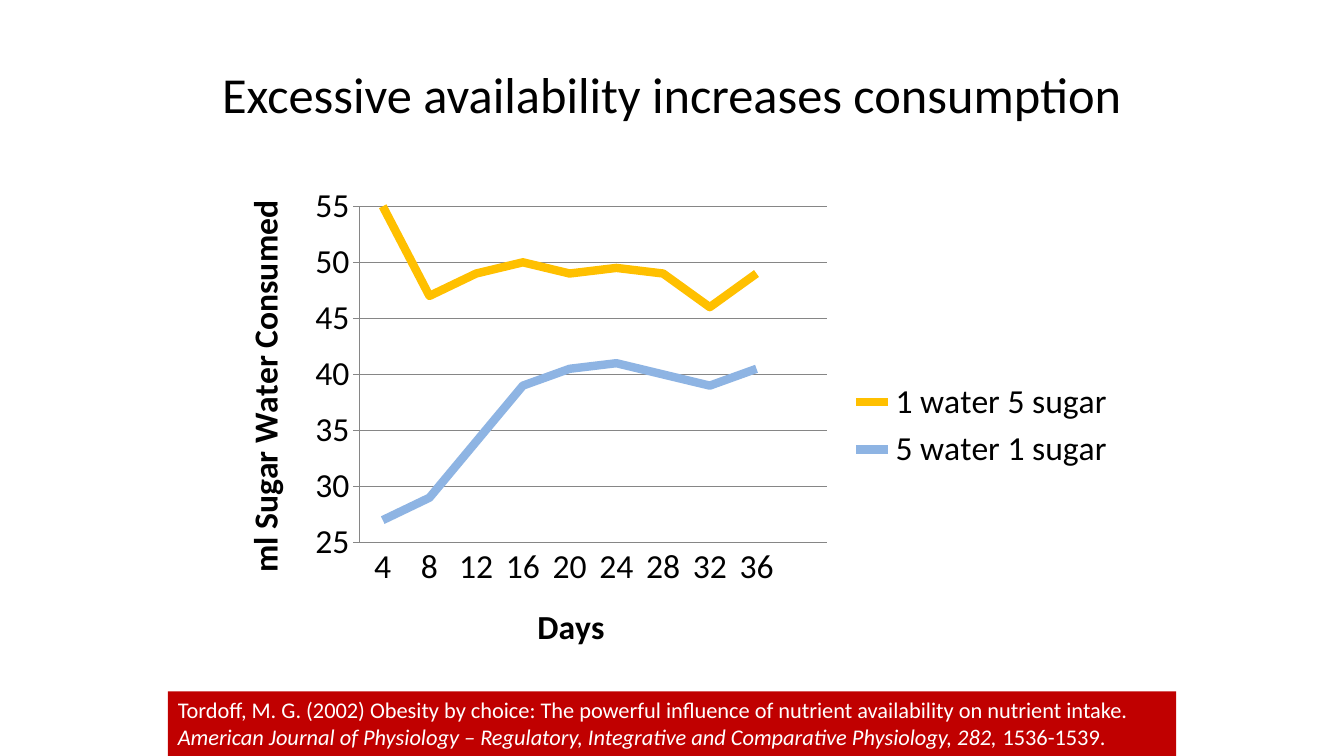
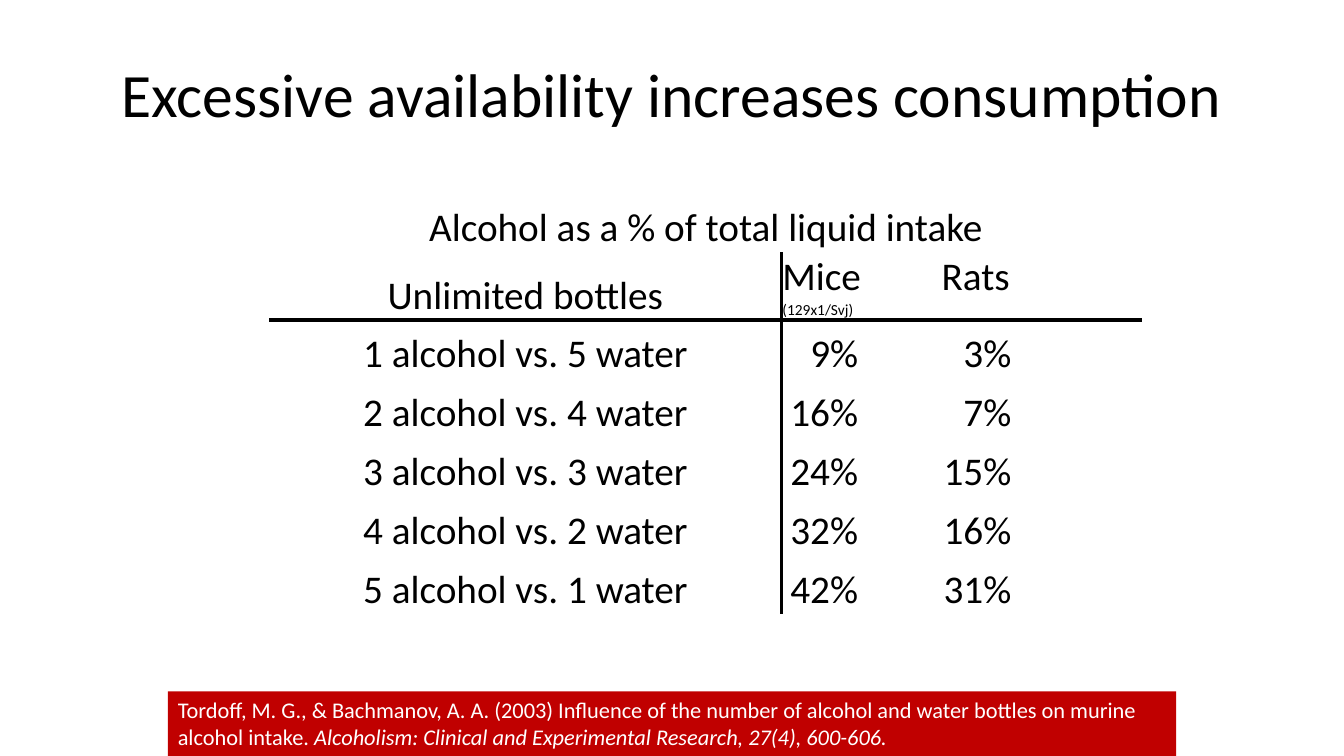
"""Build two slides on how availability increases consumption."""
from dataclasses import dataclass

from lxml.etree import SubElement
from pptx import Presentation
from pptx.chart.data import CategoryChartData
from pptx.dml.color import RGBColor
from pptx.enum.chart import XL_CHART_TYPE, XL_LEGEND_POSITION, XL_MARKER_STYLE, XL_TICK_MARK
from pptx.enum.shapes import MSO_SHAPE
from pptx.enum.text import MSO_ANCHOR, MSO_AUTO_SIZE, PP_ALIGN
from pptx.oxml import parse_xml
from pptx.oxml.ns import nsdecls, qn
from pptx.util import Inches, Pt


@dataclass(frozen=True)
class Theme:
    font: str = "Calibri"
    black: RGBColor = RGBColor(0, 0, 0)
    white: RGBColor = RGBColor(255, 255, 255)
    red: RGBColor = RGBColor(0xC0, 0, 0)
    gold: RGBColor = RGBColor(0xFF, 0xC0, 0)
    blue: RGBColor = RGBColor(0x8E, 0xB4, 0xE3)
    grid: RGBColor = RGBColor(0x86, 0x86, 0x86)
    chart_title_size: int = 36
    table_title_size: int = 44
    chart_size: int = 24
    table_size: int = 28
    strain_size: int = 11
    citation_size: int = 16


theme = Theme()


def add_run(paragraph, text, size, color=theme.black, italic=False):
    run = paragraph.add_run()
    run.text = text
    run.font.name = theme.font
    run.font.size = Pt(size)
    run.font.color.rgb = color
    run.font.italic = italic


def add_slide(title_text, title_size, title_width, citation):
    slide = presentation.slides.add_slide(presentation.slide_layouts[5])
    title = slide.shapes.title
    title.left = Inches((13.33 - title_width) / 2)
    title.top = Inches(0.3)
    title.width, title.height = Inches(title_width), Inches(1.25)
    title.text_frame.vertical_anchor = MSO_ANCHOR.MIDDLE
    paragraph = title.text_frame.paragraphs[0]
    paragraph.alignment = PP_ALIGN.CENTER
    add_run(paragraph, title_text, title_size)

    band = slide.shapes.add_shape(
        MSO_SHAPE.RECTANGLE, Inches((13.33 - 10) / 2), Inches(6.86), Inches(10), Inches(0.64)
    )
    band.shadow.inherit = False
    band.fill.solid()
    band.fill.fore_color.rgb = theme.red
    band.line.fill.background()
    frame = band.text_frame
    frame.word_wrap = True
    frame.auto_size = MSO_AUTO_SIZE.SHAPE_TO_FIT_TEXT
    frame.vertical_anchor = MSO_ANCHOR.TOP
    frame.paragraphs[0].alignment = PP_ALIGN.LEFT
    for text, italic in citation:
        add_run(frame.paragraphs[0], text, theme.citation_size, theme.white, italic)
    return slide


presentation = Presentation()
presentation.slide_width = Inches(13.33)
presentation.slide_height = Inches(7.5)
title_text = "Excessive availability increases consumption"

chart_slide = add_slide(title_text, theme.chart_title_size, 10, [
    ("Tordoff, M. G. (2002) Obesity by choice: The powerful influence of nutrient "
     "availability on nutrient intake. ", False),
    ("American Journal of Physiology – Regulatory, Integrative and Comparative "
     "Physiology, 282, ", True),
    ("1536-1539.", False),
])
chart_data = CategoryChartData()
chart_data.categories = [str(day) for day in range(4, 40, 4)] + [""]
chart_data.add_series("1 water 5 sugar", [55, 47, 49, 50, 49, 49.5, 49, 46, 49, None])
chart_data.add_series("5 water 1 sugar", [27, 29, 34, 39, 40.5, 41, 40, 39, 40.5, None])
chart = chart_slide.shapes.add_chart(
    XL_CHART_TYPE.LINE, Inches(2.17), Inches(1.75), Inches(9), Inches(4.95), chart_data
).chart
chart.has_title = False
chart.font.name = theme.font
chart.font.size = Pt(theme.chart_size)
chart.font.color.rgb = theme.black
chart.has_legend = True
chart.legend.position = XL_LEGEND_POSITION.RIGHT
chart.legend.include_in_layout = False

plot = chart.plots[0]
plot.vary_by_categories = False
for series, color in zip(plot.series, (theme.gold, theme.blue)):
    series.smooth = False
    series.marker.style = XL_MARKER_STYLE.NONE
    series.format.line.color.rgb = color
    series.format.line.width = Pt(6)

days_axis, volume_axis = chart.category_axis, chart.value_axis
for axis, axis_title in ((days_axis, "Days"), (volume_axis, "ml Sugar Water Consumed")):
    paragraph = axis.axis_title.text_frame.paragraphs[0]
    add_run(paragraph, axis_title, theme.chart_size)
    paragraph.runs[0].font.bold = True
    axis.format.line.color.rgb = theme.grid
    axis.format.line.width = Pt(0.75)
    axis.minor_tick_mark = XL_TICK_MARK.NONE
days_axis.major_tick_mark = XL_TICK_MARK.NONE
volume_axis.major_tick_mark = XL_TICK_MARK.OUTSIDE
volume_axis.minimum_scale, volume_axis.maximum_scale = 25, 55
volume_axis.major_unit = 5
volume_axis.has_major_gridlines = True
volume_axis.major_gridlines.format.line.color.rgb = theme.grid
volume_axis.major_gridlines.format.line.width = Pt(0.75)

chart_space = chart._chartSpace
for body in chart_space.xpath("//c:valAx/c:title//a:bodyPr"):
    body.set("rot", "-5400000")
    body.set("vert", "horz")
plot_area = chart_space.xpath("//c:plotArea")[0]
for layout in plot_area.findall(qn("c:layout")):
    plot_area.remove(layout)
layout = parse_xml(f"<c:layout {nsdecls('c')}><c:manualLayout/></c:layout>")
for tag, value in (("layoutTarget", "inner"), ("xMode", "edge"), ("yMode", "edge"),
                   ("x", 0.155), ("y", 0.06), ("w", 0.515), ("h", 0.674)):
    SubElement(layout[0], qn(f"c:{tag}")).set("val", str(value))
plot_area.insert(0, layout)

table_slide = add_slide(title_text, theme.table_title_size, 12, [
    ("Tordoff, M. G., & Bachmanov, A. A. (2003) Influence of the number of alcohol and "
     "water bottles on murine alcohol intake. ", False),
    ("Alcoholism: Clinical and Experimental Research, 27(4), 600-606.", True),
])
table_rows = [
    ("Alcohol as a % of total liquid intake", "", ""),
    ("Unlimited bottles", "Mice", "Rats"),
    ("1 alcohol vs. 5 water", "9%", "3%"),
    ("2 alcohol vs. 4 water", "16%", "7%"),
    ("3 alcohol vs. 3 water", "24%", "15%"),
    ("4 alcohol vs. 2 water", "32%", "16%"),
    ("5 alcohol vs. 1 water", "42%", "31%"),
]
table = table_slide.shapes.add_table(
    len(table_rows), 3, Inches(2.67), Inches(1.92), Inches(8.66), Inches(4.17)
).table
table.first_row = table.horz_banding = False
table._tbl.tblPr[0].text = "{2D5ABB26-0587-4C30-8999-92F81FD0307C}"
for column, width in zip(table.columns, (5.08, 1.58, 2)):
    column.width = Inches(width)
for row in table.rows:
    row.height = Inches(3.5 / 6)
table.rows[1].height = Inches(0.67)
table.cell(0, 0).merge(table.cell(0, 2))

percent_margins = (0.01, 0.82, 1.3)
for row_index, texts in enumerate(table_rows):
    for column_index, text in enumerate(texts):
        cell = table.cell(row_index, column_index)
        cell.margin_left = cell.margin_top = cell.margin_right = Inches(0.01)
        cell.margin_bottom = 0
        cell.vertical_anchor = MSO_ANCHOR.BOTTOM
        edges = {
            "lnL": row_index > 0 and column_index == 1,
            "lnR": row_index > 0 and column_index == 0,
            "lnT": row_index == 2,
            "lnB": row_index == 1,
        }
        for tag, visible in edges.items():
            border = SubElement(cell._tc.get_or_add_tcPr(), qn(f"a:{tag}"))
            if visible:
                border.set("w", str(Pt(3)))
                fill = SubElement(border, qn("a:solidFill"))
                SubElement(fill, qn("a:srgbClr"), val=str(theme.black))
            else:
                SubElement(border, qn("a:noFill"))
        cell.fill.background()
        paragraph = cell.text_frame.paragraphs[0]
        if column_index == 0:
            paragraph.alignment = PP_ALIGN.CENTER
        elif row_index > 1:
            paragraph.alignment = PP_ALIGN.RIGHT
            cell.margin_left = 0
            cell.margin_right = Inches(percent_margins[column_index])
        if text:
            add_run(paragraph, text, theme.table_size)

strain_paragraph = table.cell(1, 1).text_frame.paragraphs[0]
strain_paragraph.add_line_break()
add_run(strain_paragraph, "(129x1/Svj)", theme.strain_size)
table.cell(1, 2).vertical_anchor = MSO_ANCHOR.TOP

presentation.save("out.pptx")
